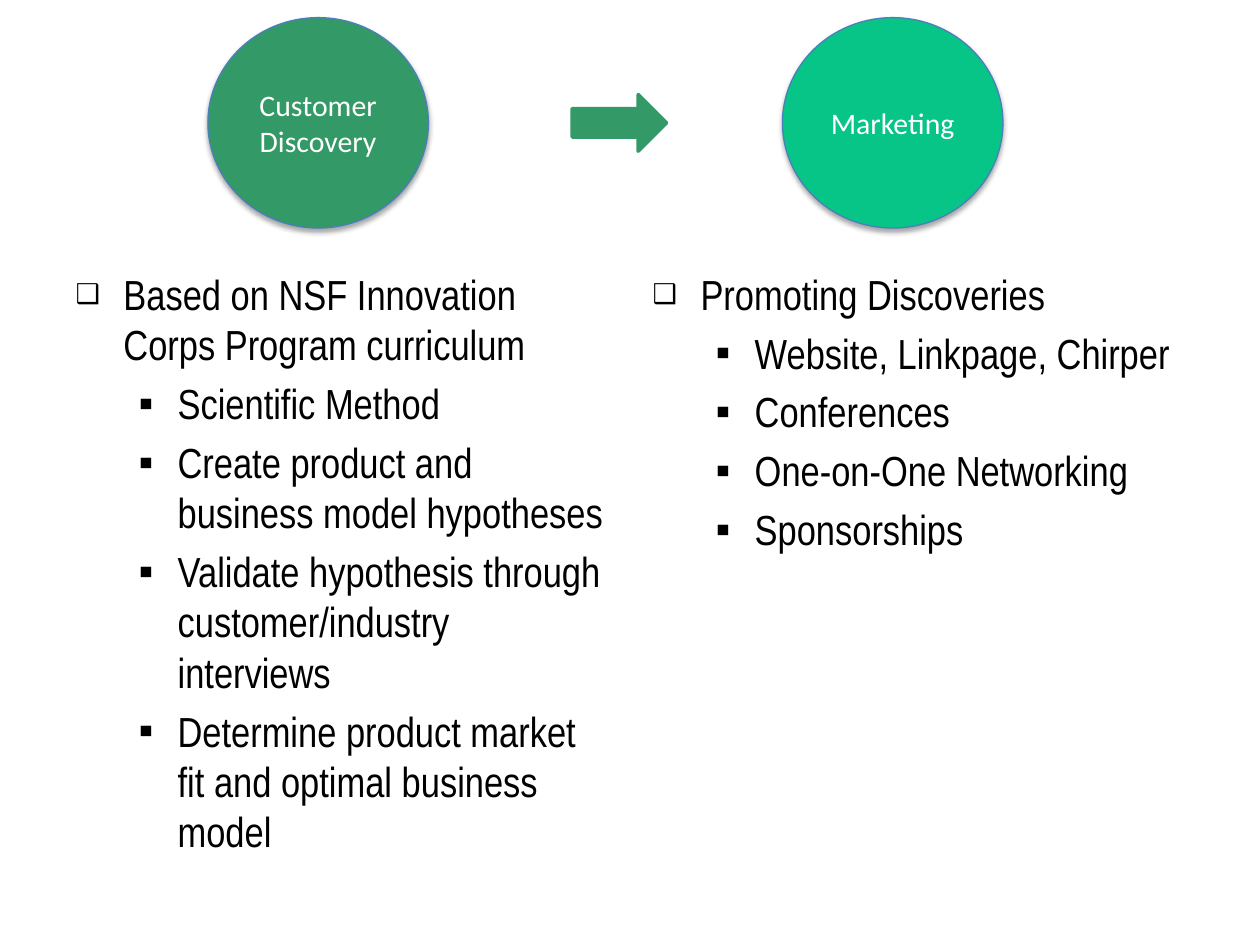
from lxml import etree
from pptx import Presentation
from pptx.dml.color import RGBColor
from pptx.enum.shapes import MSO_SHAPE
from pptx.enum.text import MSO_ANCHOR, MSO_AUTO_SIZE, PP_ALIGN
from pptx.oxml import parse_xml
from pptx.oxml.ns import qn
from pptx.util import Inches, Pt

OVAL, ARROW = MSO_SHAPE.OVAL, MSO_SHAPE.RIGHT_ARROW
TOP, MIDDLE = MSO_ANCHOR.TOP, MSO_ANCHOR.MIDDLE
CENTER, LEFT = PP_ALIGN.CENTER, PP_ALIGN.LEFT
NO_FIT = MSO_AUTO_SIZE.NONE

THEME = {
    "green": RGBColor(0x33, 0x99, 0x66),
    "mint": RGBColor(0x07, 0xC5, 0x86),
    "outline": RGBColor(0x4B, 0x7E, 0xBC),
    "body": {"name": "Arial Narrow", "size": Pt(24), "color": RGBColor(0, 0, 0)},
    "label": {"name": "Calibri", "size": Pt(17), "color": RGBColor(255, 255, 255)},
}
# Per list level: left margin, hanging indent, bullet, bullet size in percent
LEVELS = [(0.38, 0.38, "❑", 65), (0.81, 0.31, "▪", 100)]
SHADOW = (
    '<a:effectLst xmlns:a="http://schemas.openxmlformats.org/drawingml/2006/main">'
    f'<a:outerShdw blurRad="{Pt(3.1)}" dist="{Pt(1.8)}" dir="5400000" rotWithShape="0">'
    '<a:srgbClr val="000000"><a:alpha val="35000"/></a:srgbClr>'
    "</a:outerShdw></a:effectLst>"
)


def write(paragraph, text, style):
    run = paragraph.add_run()
    run.text = text
    run.font.name = style["name"]
    run.font.size = style["size"]
    run.font.color.rgb = style["color"]


def add_solid(kind, box, fill, line, width):
    shape = slide.shapes.add_shape(kind, *[Inches(v) for v in box])
    shape.fill.solid()
    shape.fill.fore_color.rgb = fill
    shape.line.color.rgb = line
    shape.line.width = Pt(width)
    shape.shadow.inherit = False
    return shape


prs = Presentation()
prs.slide_width, prs.slide_height = Inches(10), Inches(7.5)
# Two-content layout; the slide shows no title
slide = prs.slides.add_slide(prs.slide_layouts[3])
title = slide.shapes.title.element
title.getparent().remove(title)

# Bulleted columns: a heading followed by its points
columns = [
    (1, 0.5, 5.17, [
        "Based on NSF Innovation Corps Program curriculum",
        "Scientific Method",
        "Create product and business model hypotheses",
        "Validate hypothesis through customer/industry interviews",
        "Determine product market fit and optimal business model",
    ]),
    (2, 5.08, 4, [
        "Promoting Discoveries",
        "Website, Linkpage, Chirper",
        "Conferences",
        "One-on-One Networking",
        "Sponsorships",
    ]),
]
for idx, left, height, lines in columns:
    column = slide.placeholders[idx]
    place = {"left": left, "top": 2.08, "width": 4.42, "height": height}
    for side, value in place.items():
        setattr(column, side, Inches(value))
    frame = column.text_frame
    frame_format = {"word_wrap": True, "auto_size": NO_FIT, "vertical_anchor": TOP}
    for name, value in frame_format.items():
        setattr(frame, name, value)
    for number, line in enumerate(lines):
        paragraph = frame.add_paragraph() if number else frame.paragraphs[0]
        level = min(number, 1)
        margin, hanging, bullet, percent = LEVELS[level]
        properties = paragraph._p.get_or_add_pPr()
        properties.set("marL", str(Inches(margin)))
        properties.set("indent", str(-Inches(hanging)))
        etree.SubElement(properties, qn("a:buSzPct"), val=str(percent * 1000))
        etree.SubElement(properties, qn("a:buChar"), char=bullet)
        paragraph.level = level
        paragraph.alignment = LEFT
        paragraph.space_before = Pt(4.8 if number else 0)
        write(paragraph, line, THEME["body"])

# Circles for the two stages
stages = [("Customer Discovery", 1.65, "green"), ("Marketing", 6.21, "mint")]
for label, left, color in stages:
    circle = add_solid(OVAL, (left, 0.14, 1.75, 1.67), THEME[color], THEME["outline"], 0.75)
    properties = circle._element.spPr
    properties.replace(properties.find(qn("a:effectLst")), parse_xml(SHADOW))
    frame = circle.text_frame
    frame_format = {"word_wrap": True, "vertical_anchor": MIDDLE,
                    "margin_left": Inches(0.05), "margin_right": Inches(0.05)}
    for name, value in frame_format.items():
        setattr(frame, name, value)
    frame.paragraphs[0].alignment = CENTER
    write(frame.paragraphs[0], label, THEME["label"])

# Arrow from discovery to marketing
add_solid(ARROW, (4.54, 0.75, 0.75, 0.45), THEME["green"], THEME["green"], 2)

prs.save("out.pptx")
